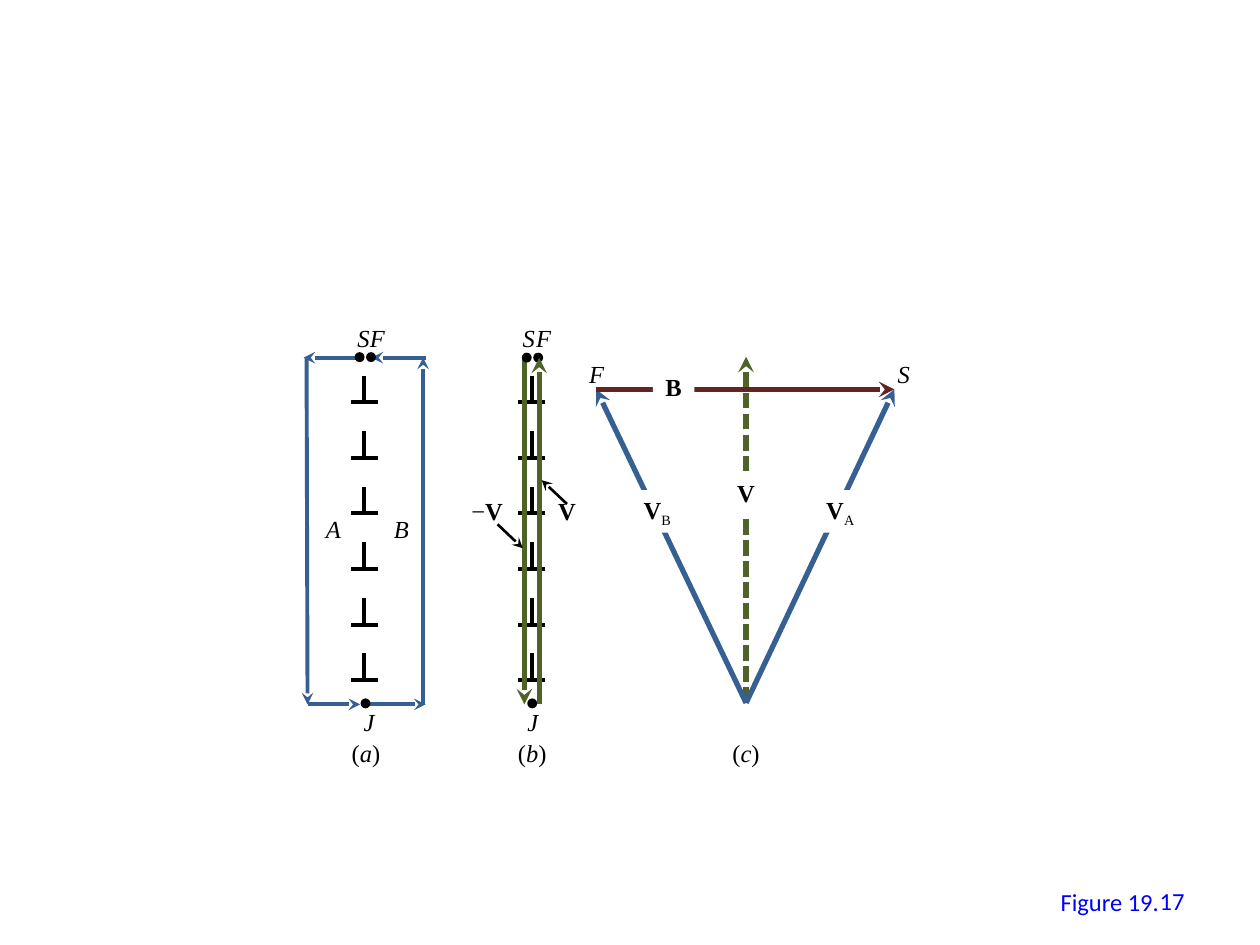
from dataclasses import dataclass

from lxml import etree
from pptx import Presentation
from pptx.dml.color import RGBColor
from pptx.enum.dml import MSO_LINE
from pptx.enum.shapes import MSO_CONNECTOR, MSO_SHAPE
from pptx.enum.text import MSO_ANCHOR, MSO_AUTO_SIZE, PP_ALIGN
from pptx.oxml.ns import qn
from pptx.util import Cm, Pt

STRAIGHT = MSO_CONNECTOR.STRAIGHT
OVAL, RECTANGLE = MSO_SHAPE.OVAL, MSO_SHAPE.RECTANGLE
DASHED = MSO_LINE.SQUARE_DOT
FIT_TEXT = MSO_AUTO_SIZE.SHAPE_TO_FIT_TEXT
MIDDLE = MSO_ANCHOR.MIDDLE
LEFT, CENTER, RIGHT = PP_ALIGN.LEFT, PP_ALIGN.CENTER, PP_ALIGN.RIGHT


@dataclass(frozen=True)
class Theme:
    black: RGBColor = RGBColor(0x00, 0x00, 0x00)
    white: RGBColor = RGBColor(0xFF, 0xFF, 0xFF)
    blue: RGBColor = RGBColor(0x37, 0x60, 0x92)
    green: RGBColor = RGBColor(0x4F, 0x62, 0x28)
    red: RGBColor = RGBColor(0x63, 0x25, 0x23)
    caption: RGBColor = RGBColor(0x00, 0x00, 0xFF)
    label_font: str = "Times New Roman"
    caption_font: str = "Calibri"
    text_size: Pt = Pt(14)
    thin: Pt = Pt(1.5)
    medium: Pt = Pt(2.25)
    thick: Pt = Pt(3)


THEME = Theme()
LABEL_HEIGHT = 0.86
CIRCUIT_TOP, CIRCUIT_BOTTOM = 7.21, 14.2
DISLOCATION_COUNT = 6


def add_line(slide, start, end, color, width, arrow=True, dash=None):
    line = slide.shapes.add_connector(
        STRAIGHT, Cm(start[0]), Cm(start[1]), Cm(end[0]), Cm(end[1]))
    line.line.color.rgb = color
    line.line.width = width
    if dash:
        line.line.dash_style = dash
    if arrow:
        etree.SubElement(line.line._get_or_add_ln(), qn("a:tailEnd"), type="stealth")
    etree.SubElement(line._element.spPr, qn("a:effectLst"))


def add_dot(slide, x, y, diameter=0.2):
    """Add a black dot centred on (x, y)."""
    dot = slide.shapes.add_shape(
        OVAL, Cm(x - diameter / 2), Cm(y - diameter / 2), Cm(diameter), Cm(diameter))
    dot.shadow.inherit = False
    dot.fill.solid()
    dot.fill.fore_color.rgb = THEME.black
    dot.line.fill.background()


def write_runs(shape, runs):
    """Write (text, style) runs; styles are plain, italic, bold and sub."""
    frame = shape.text_frame
    frame.word_wrap = False
    frame.auto_size = FIT_TEXT
    paragraph = frame.paragraphs[0]
    paragraph.alignment = CENTER
    paragraph.font.name = THEME.label_font
    paragraph.font.size = THEME.text_size
    paragraph.font.color.rgb = THEME.black
    for text, style in runs:
        run = paragraph.add_run()
        run.text = text
        run.font.italic = style == "italic"
        run.font.bold = style == "bold"
        if style == "sub":
            run._r.get_or_add_rPr().set("baseline", "-25000")


def add_label(slide, center, top, width, *runs):
    box = slide.shapes.add_textbox(
        Cm(center - width / 2), Cm(top), Cm(width), Cm(LABEL_HEIGHT))
    write_runs(box, runs)


def add_vector_label(slide, center, top, width, *runs):
    """Add a label on a white rectangle that interrupts the line below it."""
    shape = slide.shapes.add_shape(
        RECTANGLE, Cm(center - width / 2), Cm(top), Cm(width), Cm(LABEL_HEIGHT))
    shape.shadow.inherit = False
    shape.fill.solid()
    shape.fill.fore_color.rgb = THEME.white
    shape.line.fill.background()
    write_runs(shape, runs)


def add_dislocations(slide, x, first_top=7.57, pitch=1.12, height=0.54, half_bar=0.27):
    for index in range(DISLOCATION_COUNT):
        top = first_top + index * pitch
        foot = top + height
        for start, end in (((x, top), (x, foot)),
                           ((x + half_bar, foot), (x - half_bar, foot))):
            add_line(slide, start, end, THEME.black, THEME.medium, arrow=False)


def add_panel_caption(slide, center, letter):
    add_label(slide, center, 14.76, 1.09,
              ("(", "plain"), (letter, "italic"), (")", "plain"))


def add_circuit_panel(slide):
    top, bottom = CIRCUIT_TOP, CIRCUIT_BOTTOM
    for start, end in (((7.32, bottom), (8.58, bottom)),
                       ((6.18, top), (6.2, bottom)),
                       ((6.2, bottom), (7.26, bottom)),
                       ((7.19, top), (6.12, top)),
                       ((8.53, bottom), (8.53, top)),
                       ((8.58, top), (7.49, top))):
        add_line(slide, start, end, THEME.blue, THEME.medium)
    add_dislocations(slide, 7.34)
    for x, y in ((7.37, 14.18), (7.25, 7.2), (7.48, 7.2)):
        add_dot(slide, x, y)
    for text, center, label_top, width in (("S", 7.33, 6.38, 0.89),
                                           ("F", 7.61, 6.38, 0.94),
                                           ("J", 7.44, 14.12, 0.86),
                                           ("A", 6.72, 10.24, 0.94),
                                           ("B", 8.09, 10.24, 0.94)):
        add_label(slide, center, label_top, width, (text, "italic"))
    add_panel_caption(slide, 7.38, "a")


def add_collapsed_panel(slide):
    top, bottom = CIRCUIT_TOP, CIRCUIT_BOTTOM
    add_dislocations(slide, 10.72)
    add_line(slide, (10.57, top), (10.57, bottom), THEME.green, THEME.thick)
    for x, y in ((10.73, 14.18), (10.62, 7.21), (10.85, 7.21)):
        add_dot(slide, x, y)
    add_line(slide, (10.87, bottom), (10.87, top), THEME.green, THEME.thick)
    for text, center, label_top, width in (("S", 10.66, 6.38, 0.89),
                                           ("F", 10.96, 6.38, 0.94),
                                           ("J", 10.74, 14.12, 0.86)):
        add_label(slide, center, label_top, width, (text, "italic"))
    add_label(slide, 9.82, 9.88, 1.14, ("−", "plain"), ("V", "bold"))
    add_label(slide, 11.43, 9.88, 0.86, ("V", "bold"))
    add_line(slide, (10.03, 10.57), (10.54, 11.05), THEME.black, THEME.thin)
    add_line(slide, (11.43, 10.16), (10.92, 9.68), THEME.black, THEME.thin)
    add_panel_caption(slide, 10.73, "b")


def add_vector_panel(slide):
    apex = (15.04, 14.17)
    left, right = (12.02, 7.85), (18.03, 7.85)
    add_line(slide, apex, (apex[0], 7.19), THEME.green, THEME.thick, dash=DASHED)
    add_line(slide, apex, right, THEME.blue, THEME.thick)
    add_line(slide, apex, left, THEME.blue, THEME.thick)
    add_line(slide, left, right, THEME.red, THEME.thick)
    add_vector_label(slide, apex[0], 9.5, 0.86, ("V", "bold"))
    add_vector_label(slide, 16.94, 9.88, 1.12, ("V", "bold"), ("A", "sub"))
    add_vector_label(slide, 13.25, 9.88, 1.09, ("V", "bold"), ("B", "sub"))
    add_vector_label(slide, 13.58, 7.37, 0.84, ("B", "bold"))
    add_label(slide, 12.03, 7.11, 0.94, ("F", "italic"))
    add_label(slide, 18.22, 7.11, 0.89, ("S", "italic"))
    add_panel_caption(slide, apex[0], "c")


def add_caption_part(slide, text, left, top, width, height, alignment):
    box = slide.shapes.add_textbox(Cm(left), Cm(top), Cm(width), Cm(height))
    box.text_frame.word_wrap = True
    box.text_frame.vertical_anchor = MIDDLE
    paragraph = box.text_frame.paragraphs[0]
    paragraph.text = text
    paragraph.alignment = alignment
    paragraph.font.name = THEME.caption_font
    paragraph.font.size = THEME.text_size
    paragraph.font.color.rgb = THEME.caption


def main():
    presentation = Presentation()
    presentation.slide_width, presentation.slide_height = Cm(25.4), Cm(19.05)
    slide = presentation.slides.add_slide(presentation.slide_layouts[6])
    add_circuit_panel(slide)
    add_collapsed_panel(slide)
    add_vector_panel(slide)
    add_caption_part(slide, "Figure 19.", 21.13, 17.75, 2.6, 0.86, LEFT)
    add_caption_part(slide, "17", 18.21, 17.65, 5.92, 1.02, RIGHT)
    presentation.save("out.pptx")


if __name__ == "__main__":
    main()
